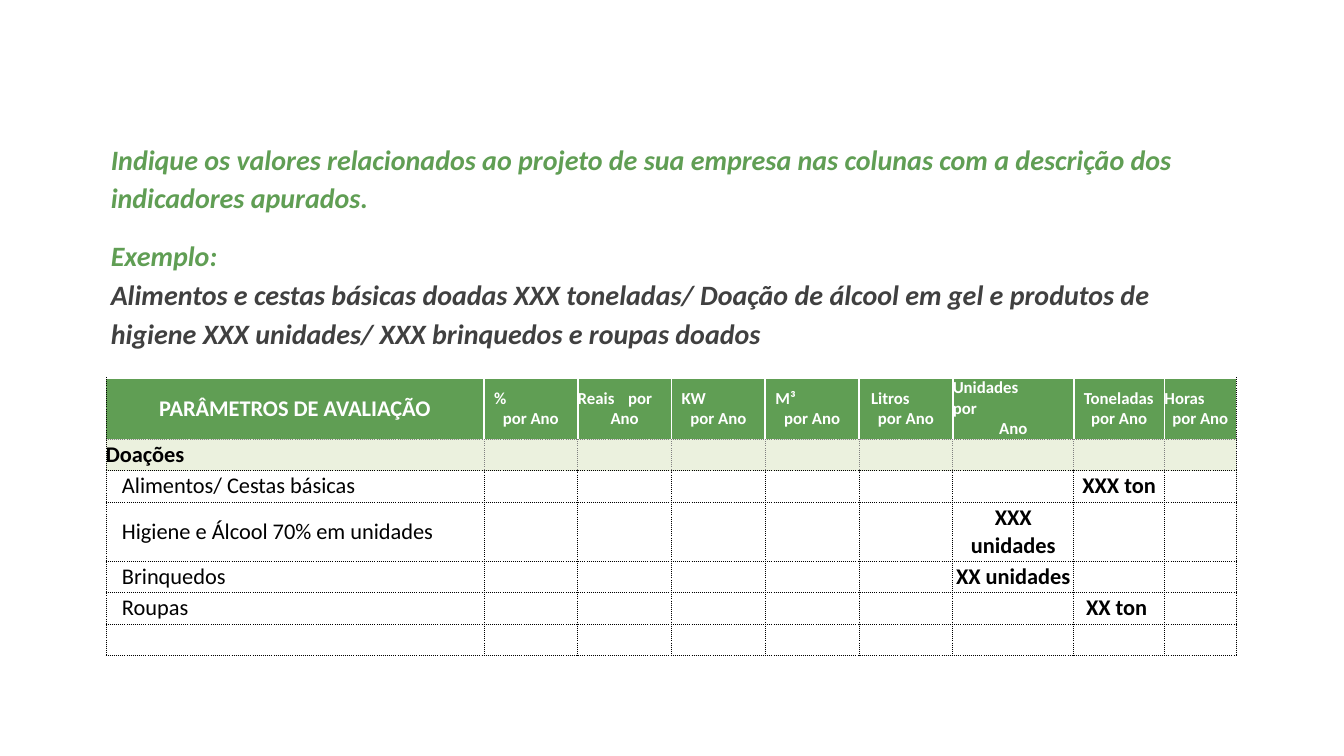
import pptx
import pptx.dml.color
import pptx.enum.text
import pptx.oxml
import pptx.oxml.ns
import pptx.util
from pptx.util import Inches

GREEN, PALE_GREEN, DARK = "609E54", "EBF1DE", "404040"
BLACK, WHITE, GREY = "000000", "FFFFFF", "808080"
FONT = "Calibri"
ALIGN = pptx.enum.text.PP_ALIGN

COLUMN_WIDTHS = [3.75] + [0.93] * 5 + [1.2, 0.9, 0.71]
ROW_HEIGHTS = [0.53, 0.31, 0.31, 0.59, 0.31, 0.31, 0.31]
UNITS = [
    ("%", "por Ano", 0.1),
    ("Reais\tpor", "Ano", 0),
    ("KW", "por Ano", 0.1),
    ("M³", "por Ano", 0.1),
    ("Litros", "por Ano", 0.12),
    ("Unidades\tpor", "Ano", 0),
    ("Toneladas", "por Ano", 0.1),
    ("Horas", "por Ano", 0),
]
DONATIONS = [
    ("Alimentos/ Cestas básicas", 7, "XXX ton"),
    ("Higiene e Álcool 70% em unidades", 6, "XXX unidades"),
    ("Brinquedos", 6, "XX unidades"),
    ("Roupas", 7, "XX ton\u00a0"),
]


def rgb(color):
    return pptx.dml.color.RGBColor.from_string(color)


def add_run(paragraph, text, size, color, bold=True, italic=False):
    run = paragraph.add_run()
    run.text = text
    run.font.name = FONT
    run.font.size = pptx.util.Pt(size)
    run.font.bold = bold
    run.font.italic = italic
    run.font.color.rgb = rgb(color)


def set_border(cell, side, color, dotted=True):
    width = pptx.util.Pt(0.5 if dotted else 1.5)
    dash = "sysDot" if dotted else "solid"
    cell._tc.get_or_add_tcPr().append(pptx.oxml.parse_xml(
        f'<a:ln{side} {pptx.oxml.ns.nsdecls("a")} w="{width}">'
        f'<a:solidFill><a:srgbClr val="{color}"/></a:solidFill>'
        f'<a:prstDash val="{dash}"/></a:ln{side}>'))


def format_cell(cell, row, column):
    first, last = column == 0, column == len(COLUMN_WIDTHS) - 1
    inner = {0: WHITE, 1: GREY}.get(row, BLACK)
    colors = {
        "L": BLACK if first else inner,
        "R": BLACK if last else inner,
        "T": inner,
        "B": GREY if row == 0 else BLACK,
    }
    for side, color in colors.items():
        set_border(cell, side, color, dotted=color != WHITE)
    cell.fill.solid()
    cell.fill.fore_color.rgb = rgb({0: GREEN, 1: PALE_GREEN}.get(row, WHITE))
    cell.margin_left = Inches(0.16 if first and row > 1 else 0)
    cell.margin_right = cell.margin_top = cell.margin_bottom = 0
    cell.vertical_anchor = pptx.enum.text.MSO_ANCHOR.MIDDLE


def write_cell(cell, text, size=16, color=BLACK, bold=True, align=ALIGN.LEFT):
    paragraph = cell.text_frame.paragraphs[0]
    paragraph.alignment = align
    add_run(paragraph, text, size, color, bold)


def write_unit(cell, unit, period, indent, width):
    write_cell(cell, unit, 12, WHITE)
    properties = cell.text_frame.paragraphs[0]._p.get_or_add_pPr()
    properties.set("marL", str(Inches(indent)))
    properties.set("indent", "0")
    if "\t" in unit:
        properties.append(pptx.oxml.parse_xml(
            f'<a:tabLst {pptx.oxml.ns.nsdecls("a")}>'
            f'<a:tab pos="{Inches(width - 0.02)}" algn="r"/></a:tabLst>'))
    second_line = cell.text_frame.add_paragraph()
    second_line.alignment = ALIGN.CENTER
    add_run(second_line, period, 12, WHITE)


def add_indicators(slide):
    table = slide.shapes.add_table(
        len(ROW_HEIGHTS), len(COLUMN_WIDTHS), Inches(1.05), Inches(3.75),
        Inches(sum(COLUMN_WIDTHS)), Inches(sum(ROW_HEIGHTS))).table
    table.first_row = table.horz_banding = False
    for column, width in zip(table.columns, COLUMN_WIDTHS):
        column.width = Inches(width)
    for row, height in zip(table.rows, ROW_HEIGHTS):
        row.height = Inches(height)
    for row in range(len(ROW_HEIGHTS)):
        for column in range(len(COLUMN_WIDTHS)):
            format_cell(table.cell(row, column), row, column)

    write_cell(table.cell(0, 0), "PARÂMETROS DE AVALIAÇÃO", 16, WHITE,
               align=ALIGN.CENTER)
    for column, (unit, period, indent) in enumerate(UNITS, 1):
        write_unit(table.cell(0, column), unit, period, indent,
                   COLUMN_WIDTHS[column])
    write_cell(table.cell(1, 0), "Doações")
    for row, (donation, column, amount) in enumerate(DONATIONS, 2):
        write_cell(table.cell(row, 0), donation, bold=False)
        write_cell(table.cell(row, column), amount, align=ALIGN.CENTER)


def add_instructions(slide):
    frame = slide.shapes.add_textbox(
        Inches(1), Inches(1.31), Inches(11.29), Inches(2.2)).text_frame
    frame.word_wrap = True
    frame.auto_size = pptx.enum.text.MSO_AUTO_SIZE.SHAPE_TO_FIT_TEXT
    request = frame.paragraphs[0]
    example = frame.add_paragraph()
    example.space_before = pptx.util.Pt(10)
    for paragraph in (request, example):
        paragraph.line_spacing = 1.15
        paragraph.space_after = pptx.util.Pt(4)
    add_run(request, "Indique os valores relacionados ao projeto de sua empresa "
            "nas colunas com a descrição dos indicadores apurados.",
            20, GREEN, italic=True)
    add_run(example, "Exemplo: ", 20, GREEN, italic=True)
    example.add_line_break()
    add_run(example, "Alimentos e cestas básicas doadas XXX toneladas/ Doação de "
            "álcool em gel e produtos de higiene XXX unidades/ XXX brinquedos "
            "e roupas doados", 20, DARK, italic=True)


def main():
    presentation = pptx.Presentation()
    presentation.slide_width = Inches(13.33)
    presentation.slide_height = Inches(7.5)
    slide = presentation.slides.add_slide(presentation.slide_layouts[6])
    add_indicators(slide)
    add_instructions(slide)
    presentation.save("out.pptx")


if __name__ == "__main__":
    main()
